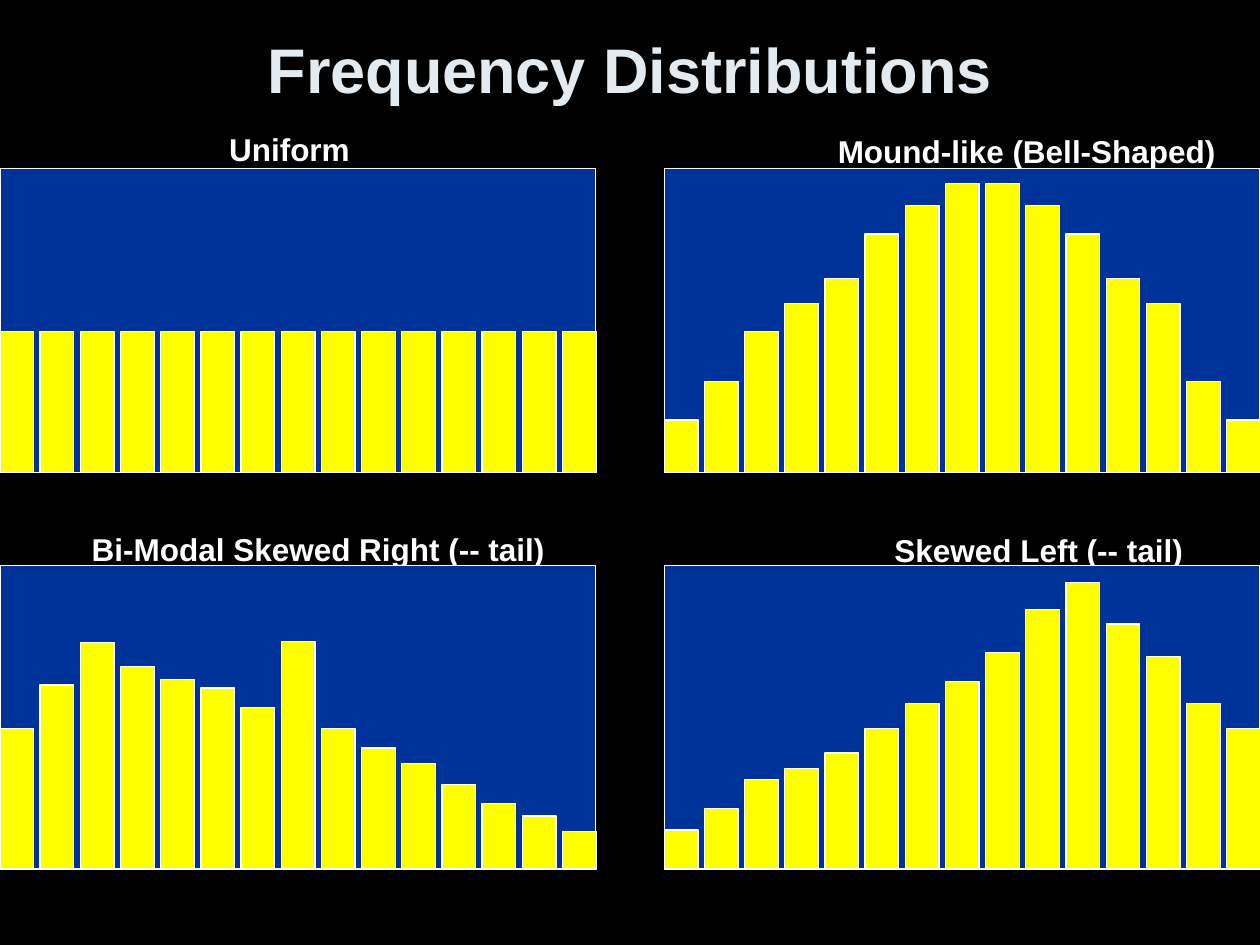
"""Build a slide comparing four frequency distribution shapes as histograms."""
from pptx import Presentation, util as u
from pptx.dml.color import RGBColor
from pptx.enum import shapes, text

THEME = {
    "background": RGBColor.from_string("000000"),
    "panel": RGBColor.from_string("003399"),
    "bar": RGBColor.from_string("FFFF00"),
    "outline": RGBColor.from_string("FFFFFF"),
    "title": {"name": "Arial", "size": u.Pt(36), "bold": True},
    "title_color": RGBColor.from_string("E3EBF1"),
    "label": {"name": "Arial", "size": u.Pt(18), "bold": True},
    "label_color": RGBColor.from_string("FFFFFF"),
}
PANEL_WIDTH, PANEL_HEIGHT = 12.01, 6.12
BAR_WIDTH, BAR_PITCH = 0.68, 0.81
LEFT, RIGHT, UPPER, LOWER = 0, 13.39, 3.4, 11.4

HISTOGRAMS = [
    ("Uniform", (4.37, 2.49, 2.97), LEFT, UPPER, [2.84] * 15),
    ("Mound-like (Bell-Shaped)", (16.64, 2.54, 8.2), RIGHT, UPPER,
     [1.05, 1.83, 2.84, 3.4, 3.91, 4.8, 5.38, 5.82,
      5.82, 5.38, 4.8, 3.91, 3.4, 1.83, 1.05]),
    ("Bi-Modal Skewed Right (-- tail)", (1.6, 10.57, 9.73), LEFT, LOWER,
     [2.84, 3.71, 4.57, 4.08, 3.82, 3.65, 3.25, 4.59,
      2.84, 2.44, 2.13, 1.7, 1.32, 1.07, 0.76]),
    ("Skewed Left (-- tail)", (17.78, 10.59, 6.4), RIGHT, LOWER,
     [0.79, 1.22, 1.8, 2.03, 2.34, 2.84, 3.34, 3.78,
      4.37, 5.23, 5.77, 4.94, 4.28, 3.34, 2.84]),
]


def write(frame, words, style):
    frame.text = words
    font = frame.paragraphs[0].runs[0].font
    for name, value in THEME[style].items():
        setattr(font, name, value)
    font.color.rgb = THEME[style + "_color"]


def add_box(group, left, top, width, height, fill):
    shape = group.shapes.add_shape(
        shapes.MSO_SHAPE.RECTANGLE, u.Cm(left), u.Cm(top), u.Cm(width), u.Cm(height))
    shape.shadow.inherit = False
    shape.fill.solid()
    shape.fill.fore_color.rgb = THEME[fill]
    shape.line.color.rgb = THEME["outline"]
    shape.line.width = u.Pt(0.75)


presentation = Presentation()
presentation.slide_width, presentation.slide_height = u.Cm(25.4), u.Cm(19.05)
slide = presentation.slides.add_slide(presentation.slide_layouts[5])
slide.background.fill.solid()
slide.background.fill.fore_color.rgb = THEME["background"]

title = slide.shapes.title
placement = {"left": 1.27, "top": 0.18, "width": 22.86, "height": 2.41}
for name, value in placement.items():
    setattr(title, name, u.Cm(value))
write(title.text_frame, "Frequency Distributions", "title")
title.text_frame.vertical_anchor = text.MSO_ANCHOR.MIDDLE
title.text_frame.paragraphs[0].alignment = text.PP_ALIGN.CENTER

for label, (label_left, label_top, label_width), left, top, heights in HISTOGRAMS:
    box = slide.shapes.add_textbox(
        u.Cm(label_left), u.Cm(label_top), u.Cm(label_width), u.Cm(1.02))
    box.text_frame.word_wrap = False
    box.text_frame.auto_size = text.MSO_AUTO_SIZE.SHAPE_TO_FIT_TEXT
    write(box.text_frame, label, "label")

    histogram = slide.shapes.add_group_shape()
    add_box(histogram, left, top, PANEL_WIDTH, PANEL_HEIGHT, "panel")
    for column, height in enumerate(heights):
        add_box(histogram, left + column * BAR_PITCH, top + PANEL_HEIGHT - height,
                BAR_WIDTH, height, "bar")

presentation.save("out.pptx")
